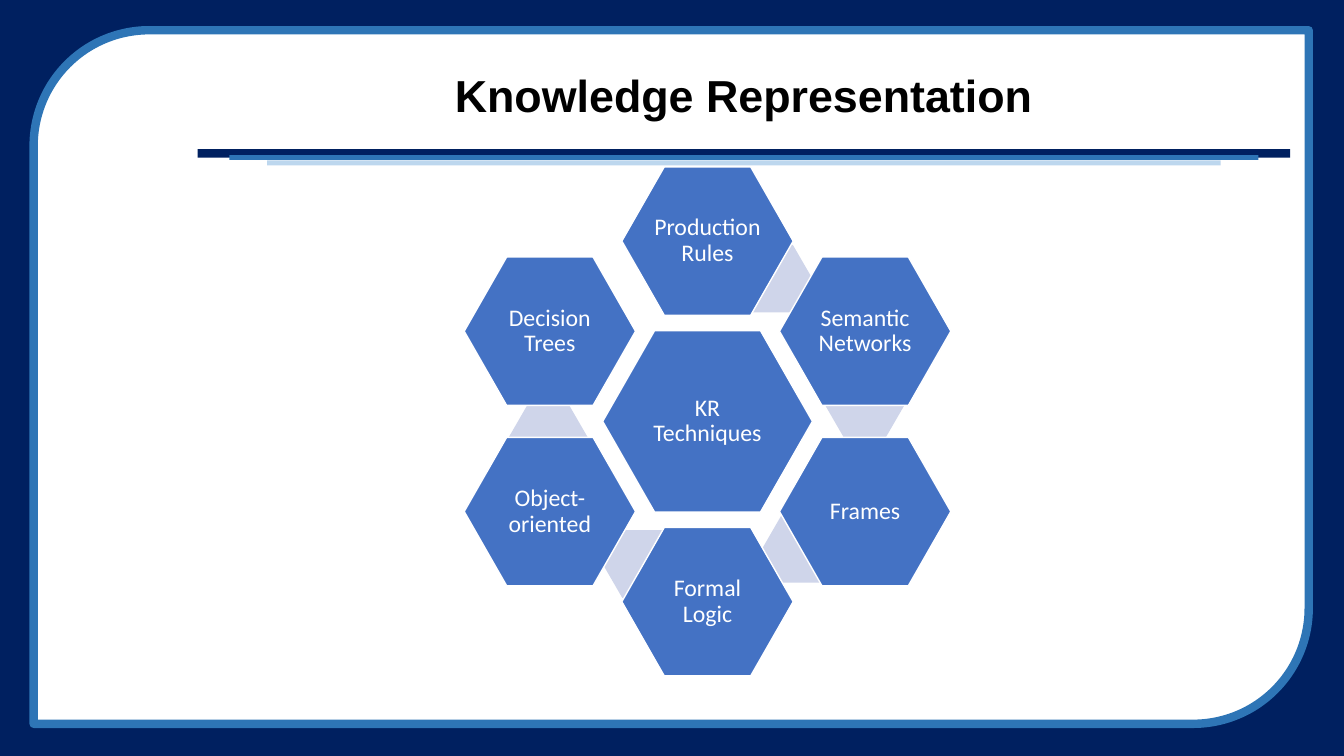
"""Build the knowledge representation slide with its ring of hexagons."""
from pptx import Presentation
from pptx.dml.color import RGBColor
from pptx.enum.shapes import MSO_SHAPE
from pptx.enum.text import MSO_ANCHOR, PP_ALIGN
from pptx.util import Pt

RECTANGLE = MSO_SHAPE.RECTANGLE
FRAME = MSO_SHAPE.ROUND_2_DIAG_RECTANGLE
HEXAGON = MSO_SHAPE.HEXAGON
MIDDLE = MSO_ANCHOR.MIDDLE
CENTER = PP_ALIGN.CENTER

WIDTH, HEIGHT = 960, 540
NAVY, BLUE, PALE = "002060", "2E75B6", "BDD7EE"
WHITE, BLACK = "FFFFFF", "000000"
NODE, LINK = "4472C4", "CFD5EA"

TITLE_CENTER = 531.4
BARS = [(106.6, 780.5, 6, NAVY), (110.9, 735.1, 3.4, BLUE), (114.5, 681.1, 3.6, PALE)]

HUB_X, HUB_Y = 505.4, 301
COLUMN, ROW = 112.6, 64.4
TECHNIQUES = [
    ("Production\nRules", 0, -2, (46.8, -101.9)),
    ("Semantic\nNetworks", 1, -1, (112.3, -11.2)),
    ("Frames", 1, 1, (67, 91.1)),
    ("Formal Logic", 0, 2, (-46.8, 101.9)),
    ("Object-\noriented", -1, 1, (-113.8, 11.2)),
    ("Decision\nTrees", -1, -1, None),
]


def color(value):
    return RGBColor.from_string(value)


class Page:
    def __init__(self, slide):
        self.shapes = slide.shapes

    def shape(self, kind, left, top, width, height, fill, line=None, weight=1):
        box = self.shapes.add_shape(kind, Pt(left), Pt(top), Pt(width), Pt(height))
        box.shadow.inherit = False
        box.fill.solid()
        box.fill.fore_color.rgb = color(fill)
        if line:
            box.line.color.rgb = color(line)
            box.line.width = Pt(weight)
        else:
            box.line.fill.background()
        return box

    def label(self, box, text, font, size, ink, bold=False):
        frame = box.text_frame
        frame.word_wrap = True
        frame.vertical_anchor = MIDDLE
        para = frame.paragraphs[0]
        para.text = text
        para.alignment = CENTER
        para.line_spacing = 0.9
        for span in para.runs:
            span.font.name = font
            span.font.size = Pt(size)
            span.font.bold = bold
            span.font.color.rgb = color(ink)

    def title(self, text, left, top, width, height):
        box = self.shapes.add_textbox(Pt(left), Pt(top), Pt(width), Pt(height))
        self.label(box, text, "Arial", 32, BLACK, bold=True)

    def hexagon(self, x, y, width, height, fill, line=None, adjust=0.286):
        box = self.shape(HEXAGON, x - width / 2, y - height / 2, width, height, fill, line)
        box.adjustments[0] = adjust
        return box

    def node(self, text, x, y, width, height):
        box = self.hexagon(x, y, width, height, NODE, WHITE)
        frame = box.text_frame
        frame.margin_left = frame.margin_right = Pt(1.5)
        frame.margin_top = frame.margin_bottom = Pt(1.5)
        self.label(box, text, "Calibri", 17, WHITE)

    def link(self, x, y):
        self.hexagon(x, y, 56.2, 48.3, LINK, adjust=0.289)


def main():
    deck = Presentation()
    deck.slide_width, deck.slide_height = Pt(WIDTH), Pt(HEIGHT)
    page = Page(deck.slides.add_slide(deck.slide_layouts[6]))

    page.shape(RECTANGLE, 0, 0, WIDTH, HEIGHT, NAVY)
    page.shape(FRAME, 24, 21.6, 910.8, 495.4, WHITE, BLUE, 6)
    for top, width, height, fill in BARS:
        page.shape(RECTANGLE, TITLE_CENTER - width / 2, top, width, height, fill)
    page.title("Knowledge Representation", TITLE_CENTER - 390.25, 35.3, 780.5, 69.8)

    page.node("KR\nTechniques", HUB_X, HUB_Y, 149.8, 129.6)
    for text, column, row, link in TECHNIQUES:
        if link:
            page.link(HUB_X + link[0], HUB_Y + link[1])
        page.node(text, HUB_X + column * COLUMN, HUB_Y + row * ROW, 122.4, 106)

    deck.save("out.pptx")


if __name__ == "__main__":
    main()
